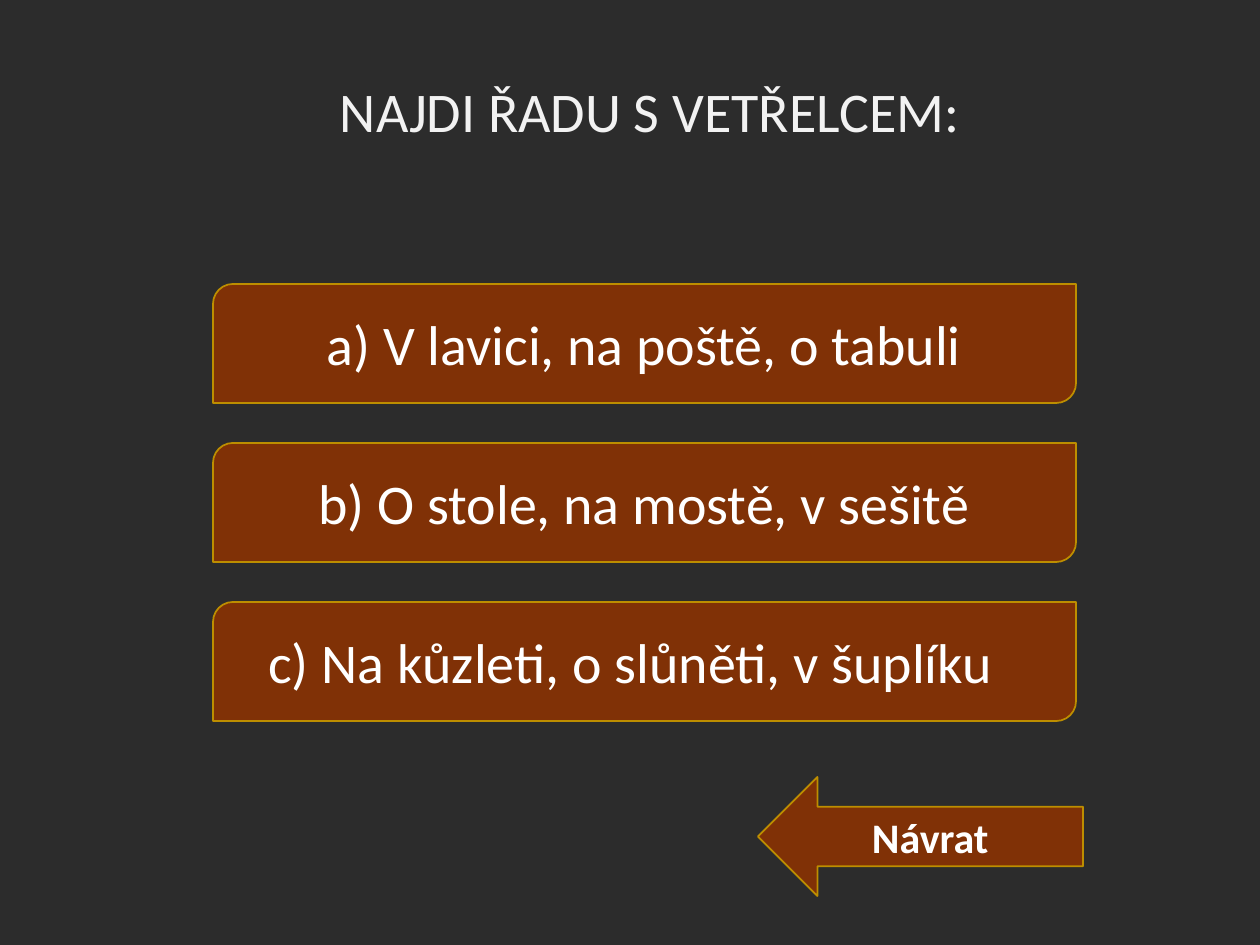
from dataclasses import dataclass

from pptx import Presentation
from pptx.dml.color import RGBColor
from pptx.enum.shapes import MSO_SHAPE as Shape
from pptx.enum.text import MSO_ANCHOR as Anchor, PP_ALIGN as Align
from pptx.util import Emu, Pt

PX_PER_INCH = 126
EMU_PER_PX = 914400 / PX_PER_INCH

BACKGROUND = RGBColor(0x2C, 0x2C, 0x2C)
BROWN = RGBColor(0x80, 0x31, 0x06)
GOLD = RGBColor(0xBD, 0x8E, 0x00)
WHITE = RGBColor(0xFF, 0xFF, 0xFF)
PALE_GREY = RGBColor(0xF2, 0xF2, 0xF2)

ANSWER_LEFT, ANSWER_TOP = 213, 284
ANSWER_WIDTH, ANSWER_HEIGHT = 863, 119
ANSWER_PITCH = 159


@dataclass(frozen=True)
class Button:
    text: str
    left: int
    top: int
    width: int
    height: int
    preset: Shape = Shape.ROUND_2_DIAG_RECTANGLE
    size: int = 32
    bold: bool = False
    right_inset: int = 13


def px(length: int) -> Emu:
    return Emu(round(length * EMU_PER_PX))


def write_text(box, text: str, *, size: int = 32, color: RGBColor = WHITE,
               bold: bool = False, line_spacing: float = 1.0,
               right_inset: int = 13) -> None:
    frame = box.text_frame
    frame.word_wrap = True
    frame.vertical_anchor = Anchor.MIDDLE
    frame.margin_right = px(right_inset)
    para = frame.paragraphs[0]
    para.alignment = Align.CENTER
    para.line_spacing = line_spacing
    span = para.add_run()
    span.text = text
    span.font.name = "Calibri"
    span.font.size = Pt(size)
    span.font.bold = bold
    span.font.color.rgb = color


def draw_button(page, button: Button) -> None:
    box = page.shapes.add_shape(button.preset, px(button.left), px(button.top),
                                px(button.width), px(button.height))
    box.shadow.inherit = False
    box.fill.solid()
    box.fill.fore_color.rgb = BROWN
    box.line.color.rgb = GOLD
    box.line.width = Pt(1)
    write_text(box, button.text, size=button.size, bold=button.bold,
               right_inset=button.right_inset)


def answer(row: int, text: str, right_inset: int = 13) -> Button:
    return Button(text, ANSWER_LEFT, ANSWER_TOP + row * ANSWER_PITCH,
                  ANSWER_WIDTH, ANSWER_HEIGHT, right_inset=right_inset)


BUTTONS = [
    answer(0, "a) V lavici, na poště, o tabuli"),
    answer(1, "b) O stole, na mostě, v sešitě"),
    answer(2, "c) Na kůzleti, o slůněti, v šuplíku", right_inset=40),
    Button("Návrat ", 758, 777, 325, 119, Shape.LEFT_ARROW, size=24, bold=True),
]


def main() -> None:
    deck = Presentation()
    deck.slide_width = px(1260)
    deck.slide_height = px(945)
    page = deck.slides.add_slide(deck.slide_layouts[6])
    page.background.fill.solid()
    page.background.fill.fore_color.rgb = BACKGROUND

    title = page.shapes.add_textbox(px(134), px(37), px(1033), px(157))
    write_text(title, "NAJDI ŘADU S VETŘELCEM:", color=PALE_GREY, line_spacing=0.85)
    for button in BUTTONS:
        draw_button(page, button)

    deck.save("out.pptx")


if __name__ == "__main__":
    main()
